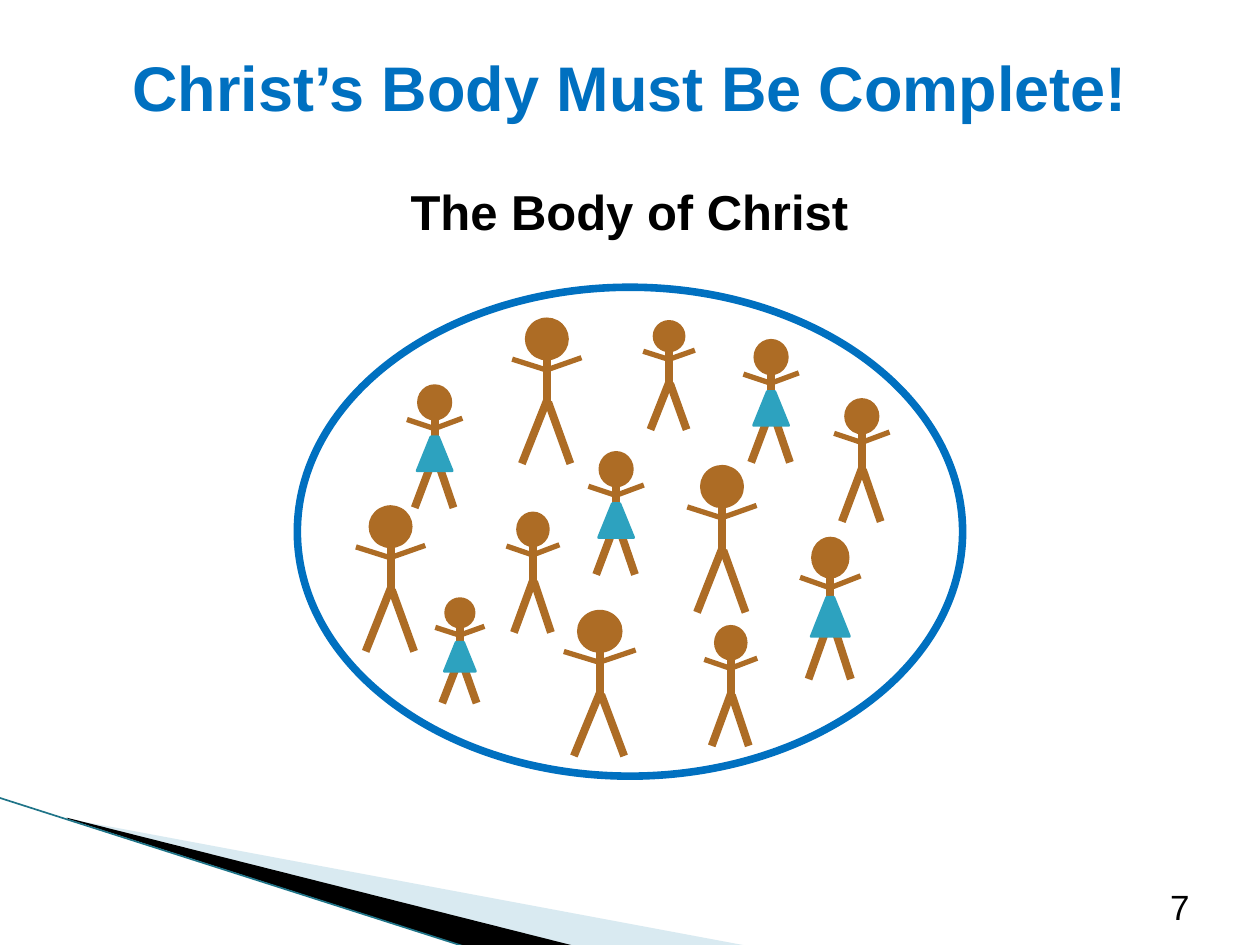
import pptx
import pptx.util
import pptx.dml.color
import pptx.enum.shapes
import pptx.enum.text
import pptx.oxml.ns
import lxml.etree

WIDTH, HEIGHT = 10, 7.5
SKIN, SKIRT, BLUE, BLACK = "AD6C25", "2DA2BF", "0070C0", "000000"
SHAPES = pptx.enum.shapes.MSO_SHAPE
ALIGN = pptx.enum.text.PP_ALIGN
ANCHOR = pptx.enum.text.MSO_ANCHOR

LIMBS = [
    ((0, 0.1), (0, 0.58), 4.5),
    ((0, 0.57), (-0.36, 1), 4.5),
    ((0.02, 0.58), (0.34, 1), 4.5),
    ((0.05, 0.35), (0.5, 0.275), 3),
    ((0, 0.36), (-0.5, 0.285), 3),
]

WOMEN = [
    (3.45, 3.05, 0.44, 0.98),
    (6.12, 2.69, 0.44, 0.98),
    (6.59, 4.26, 0.48, 1.13),
    (4.89, 3.58, 0.44, 0.98),
    (3.65, 4.74, 0.39, 0.84),
]

MEN = [
    (5.31, 2.54, 0.41, 0.87),
    (5.73, 3.69, 0.55, 1.17),
    (6.84, 3.16, 0.44, 0.98),
    (4.34, 2.52, 0.55, 1.16),
    (3.1, 4.01, 0.55, 1.16),
    (5.8, 4.96, 0.42, 0.96),
    (4.23, 4.06, 0.42, 0.96),
    (4.76, 4.84, 0.57, 1.16),
]


def inches(*lengths):
    return [pptx.util.Inches(length) for length in lengths]


def paint(target, colour, opacity=None):
    target.solid()
    target.fore_color.rgb = pptx.dml.color.RGBColor.from_string(colour)
    if opacity is not None:
        tint = target._xPr.find(".//" + pptx.oxml.ns.qn("a:srgbClr"))
        alpha = lxml.etree.SubElement(tint, pptx.oxml.ns.qn("a:alpha"))
        alpha.set("val", str(int(opacity * 100000)))


def style(shape, fill=None, line=None, weight=1, opacity=None):
    shape.shadow.inherit = False
    if fill:
        paint(shape.fill, fill, opacity)
    else:
        shape.fill.background()
    if line:
        paint(shape.line.fill, line)
        shape.line.width = pptx.util.Pt(weight)
    else:
        shape.line.fill.background()


def add_preset(shapes, kind, place, **look):
    shape = shapes.add_shape(kind, *inches(*place))
    style(shape, **look)
    return shape


def add_line(shapes, start, end, colour, weight):
    straight = pptx.enum.shapes.MSO_CONNECTOR.STRAIGHT
    line = shapes.add_connector(straight, *inches(*start, *end))
    paint(line.line.fill, colour)
    line.line.width = pptx.util.Pt(weight)
    properties = line._element.spPr
    lxml.etree.SubElement(properties, pptx.oxml.ns.qn("a:effectLst"))


def add_outline(shapes, points, fill, opacity=None):
    corners = [inches(*point) for point in points]
    builder = shapes.build_freeform(*corners[0], scale=1.0)
    builder.add_line_segments(corners[1:], close=True)
    style(builder.convert_to_shape(), fill=fill, opacity=opacity)


def add_text(shapes, place, words, size, colour, bold, align, anchor):
    box = shapes.add_textbox(*inches(*place))
    frame = box.text_frame
    frame.word_wrap = True
    frame.vertical_anchor = anchor
    para = frame.paragraphs[0]
    para.text = words
    para.alignment = align
    para.font.name = "Arial"
    para.font.size = pptx.util.Pt(size)
    para.font.bold = bold
    paint(para.font.fill, colour)


def add_person(page, centre, top, width, height, skirt=False):
    shapes = page.shapes.add_group_shape().shapes
    head = 0.635 * width
    left = centre - head / 2
    add_preset(shapes, SHAPES.OVAL, (left, top, head, 0.294 * height), fill=SKIN)
    for start, end, weight in LIMBS:
        ends = [(centre + x * width, top + y * height) for x, y in (start, end)]
        add_line(shapes, *ends, SKIN, weight)
    if skirt:
        place = (left, top + 0.425 * height, head, 0.275 * height)
        shape = add_preset(shapes, SHAPES.TRAPEZOID, place,
                           fill=SKIRT, line=SKIRT, weight=1.5)
        shape.adjustments[0] = 0.407


def add_corner_sweep(page):
    pale = [(0.55, 6.5), (5.95, 7.51), (4.56, 7.51)]
    dark = [(0.53, 6.49), (4.57, 7.51), (3.72, 7.52), (0.54, 6.5)]
    add_outline(page.shapes, pale, "A0CBDC", 0.4)
    add_outline(page.shapes, dark, BLACK)
    add_line(page.shapes, (-0.01, 6.33), (3.71, 7.52), "1F7488", 0.95)


def main():
    deck = pptx.Presentation()
    deck.slide_width, deck.slide_height = inches(WIDTH, HEIGHT)
    page = deck.slides.add_slide(deck.slide_layouts[6])
    paint(page.background.fill, "FFFFFF")
    add_corner_sweep(page)
    add_text(page.shapes, (0.5, 0.21, 9, 0.95), "Christ’s Body Must Be Complete!",
             36, BLUE, True, ALIGN.CENTER, ANCHOR.MIDDLE)
    add_preset(page.shapes, SHAPES.OVAL, (2.36, 2.28, 5.28, 3.88),
               line=BLUE, weight=4.33)
    add_text(page.shapes, (3.1, 1.39, 3.79, 0.57), "The Body of Christ",
             28, BLACK, True, ALIGN.CENTER, ANCHOR.TOP)
    for woman in WOMEN:
        add_person(page, *woman, skirt=True)
    for man in MEN:
        add_person(page, *man)
    add_text(page.shapes, (8.77, 7.01, 0.77, 0.4), "7",
             20, BLACK, False, ALIGN.RIGHT, ANCHOR.BOTTOM)
    deck.save("out.pptx")


if __name__ == "__main__":
    main()
